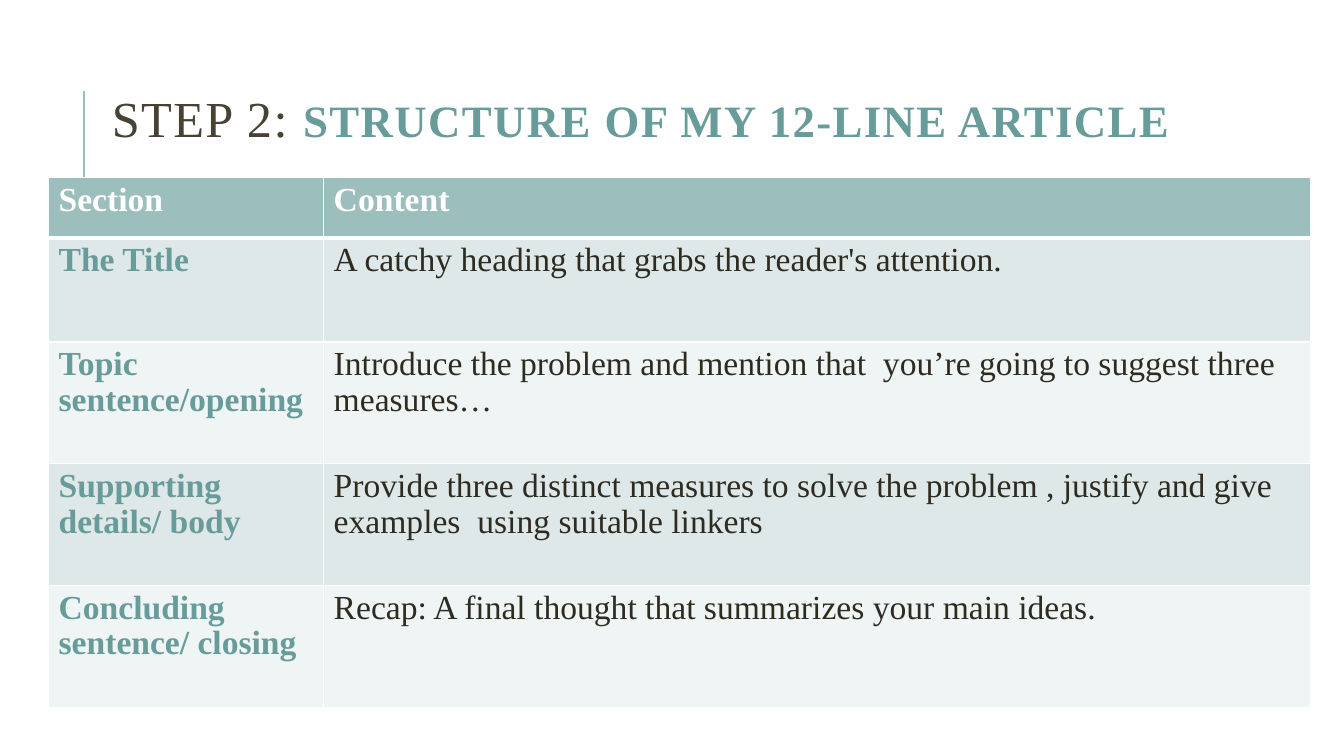
from dataclasses import dataclass

from lxml.etree import SubElement
from pptx import Presentation
from pptx.dml.color import RGBColor
from pptx.enum.shapes import MSO_CONNECTOR
from pptx.enum.text import MSO_ANCHOR, MSO_AUTO_SIZE, PP_ALIGN
from pptx.oxml.ns import qn
from pptx.util import Pt


@dataclass(frozen=True)
class Theme:
    font: str = "Times New Roman"
    step_size: int = 36
    heading_size: int = 32
    table_size: int = 24
    white: str = "FFFFFF"
    teal: str = "9CBEBD"
    deep_teal: str = "689C9A"
    olive: str = "474233"
    ink: str = "2E2B21"
    bands: tuple = ("DEE8E8", "EFF4F4")


THEME = Theme()


def style_run(run, size, color, bold):
    run.font.name = THEME.font
    run.font.size = Pt(size)
    run.font.bold = bold
    run.font.color.rgb = RGBColor.from_string(color)


def add_border(cell, side, width):
    """Draw one white edge of a cell; call before the cell gets its fill."""
    edge = SubElement(cell._tc.get_or_add_tcPr(), qn(f"a:ln{side}"), w=str(Pt(width)))
    fill = SubElement(edge, qn("a:solidFill"))
    SubElement(fill, qn("a:srgbClr"), val=THEME.white)


prs = Presentation()
prs.slide_width, prs.slide_height = Pt(960), Pt(540)
slide = prs.slides.add_slide(prs.slide_layouts[5])

# Title with its accent rule
title = slide.shapes.title
title.left, title.top, title.width, title.height = Pt(72.7), Pt(28.8), Pt(843), Pt(118)
heading = title.text_frame
heading.word_wrap = True
heading.auto_size = MSO_AUTO_SIZE.NONE
heading.vertical_anchor = MSO_ANCHOR.MIDDLE
heading_line = heading.paragraphs[0]
heading_line.alignment = PP_ALIGN.LEFT
heading_line.line_spacing = 0.8
for words, size, color, bold in (
    ("STEP 2: ", THEME.step_size, THEME.olive, False),
    ("STRUCTURE OF MY 12-LINE ARTICLE", THEME.heading_size, THEME.deep_teal, True),
):
    run = heading_line.add_run()
    run.text = words
    style_run(run, size, color, bold)
    run.font._element.set("spc", "100")

accent = slide.shapes.add_connector(
    MSO_CONNECTOR.STRAIGHT, Pt(60), Pt(136.8), Pt(60), Pt(64.8))
accent.line.color.rgb = RGBColor.from_string(THEME.teal)
accent.line.width = Pt(1.5)
SubElement(accent._element.spPr, qn("a:effectLst"))

# Article structure table
sections = [
    ("Section", "Content"),
    ("The Title", "A catchy heading that grabs the reader's attention."),
    ("Topic sentence/opening",
     "Introduce the problem and mention that  you’re going to suggest three measures…"),
    ("Supporting details/ body",
     "Provide three distinct measures to solve the problem , justify and give "
     "examples  using suitable linkers"),
    ("Concluding sentence/ closing",
     "Recap: A final thought that summarizes your main ideas."),
]
column_widths = (196.5, 704.8)
row_heights = (43, 74.5, 87, 87, 87)
structure = slide.shapes.add_table(
    len(sections), len(column_widths), Pt(34.7), Pt(126.8),
    Pt(sum(column_widths)), Pt(sum(row_heights))).table
for column, width in zip(structure.columns, column_widths):
    column.width = Pt(width)

for row, (texts, height) in enumerate(zip(sections, row_heights)):
    structure.rows[row].height = Pt(height)
    is_header = row == 0
    band = THEME.teal if is_header else THEME.bands[(row - 1) % 2]
    for col, text in enumerate(texts):
        cell = structure.cell(row, col)
        add_border(cell, "L", 1)
        add_border(cell, "R", 1)
        add_border(cell, "T", 3 if row == 1 else 1)
        add_border(cell, "B", 3 if is_header else 1)
        cell.fill.solid()
        cell.fill.fore_color.rgb = RGBColor.from_string(band)
        cell.text_frame.text = text
        paragraph = cell.text_frame.paragraphs[0]
        paragraph.line_spacing = 0.96
        color = THEME.white if is_header else (THEME.deep_teal, THEME.ink)[col]
        style_run(paragraph.runs[0], THEME.table_size, color, is_header or col == 0)

prs.save("out.pptx")
